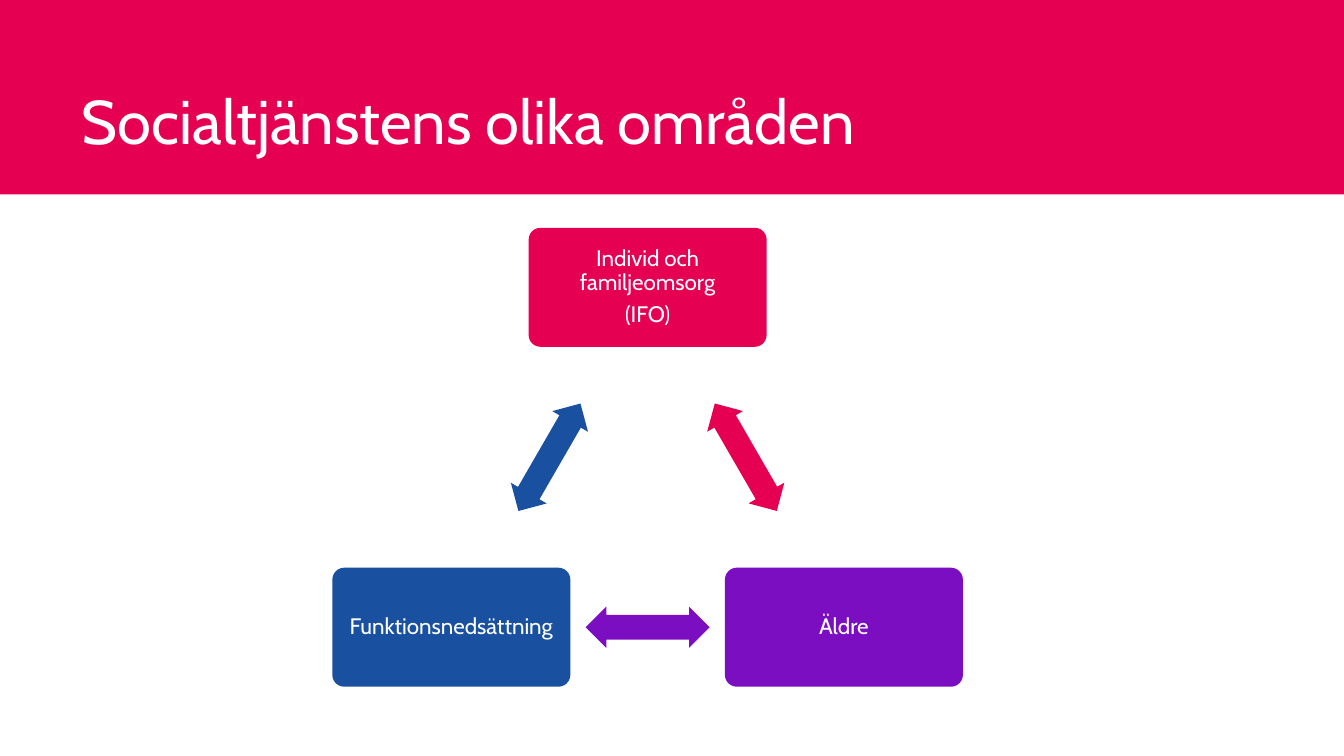
"""Build a slide showing the three linked areas of social services."""
from pptx import Presentation
from pptx.dml.color import RGBColor
from pptx.enum.shapes import MSO_SHAPE
from pptx.enum.text import MSO_ANCHOR, PP_ALIGN
from pptx.util import Pt

TITLE = "Socialtjänstens olika områden"
RED, PURPLE, BLUE, WHITE = "E50051", "7C0EC1", "1951A0", "FFFFFF"
FONT = "Cabin"
AREAS = [
    (["Individ och familjeomsorg", "(IFO)"], RED, (462.6, 205.2)),
    (["Äldre"], PURPLE, (602.8, 448)),
    (["Funktionsnedsättning"], BLUE, (322.4, 448)),
]
ARROW_TURNS = [60, 180, 300]
AREA_SIZE = (170, 85)
ARROW_SIZE = (88.6, 29.5)


def rgb(value):
    return RGBColor.from_string(value)


def add_filled(slide, kind, center, size, color, adjustments=()):
    (x, y), (width, height) = center, size
    shape = slide.shapes.add_shape(
        kind, Pt(x - width / 2), Pt(y - height / 2), Pt(width), Pt(height))
    shape.shadow.inherit = False
    shape.fill.solid()
    shape.fill.fore_color.rgb = rgb(color)
    shape.line.fill.background()
    for index, value in enumerate(adjustments):
        shape.adjustments[index] = value
    return shape


def write(frame, lines, size, align, anchor, inset, spacing, after=0):
    frame.word_wrap = True
    frame.vertical_anchor = anchor
    frame.margin_left = frame.margin_right = Pt(inset)
    frame.margin_top = frame.margin_bottom = Pt(inset)
    frame.text = "\n".join(lines)
    for paragraph in frame.paragraphs:
        paragraph.alignment = align
        paragraph.line_spacing = spacing
        paragraph.space_after = Pt(after)
        paragraph.font.name = FONT
        paragraph.font.size = Pt(size)
        paragraph.font.color.rgb = rgb(WHITE)


def main():
    deck = Presentation()
    deck.slide_width, deck.slide_height = Pt(960), Pt(540)
    slide = deck.slides.add_slide(deck.slide_layouts[6])

    add_filled(slide, MSO_SHAPE.RECTANGLE, (480, 69.4), (960, 138.8), RED)
    heading = slide.shapes.add_textbox(Pt(58.3), Pt(28.8), Pt(741.6), Pt(83.5))
    write(heading.text_frame, [TITLE], 44, PP_ALIGN.LEFT, MSO_ANCHOR.BOTTOM, 0, 1.2)

    following = AREAS[1:] + AREAS[:1]
    for area, neighbour, turn in zip(AREAS, following, ARROW_TURNS):
        lines, color, center = area
        box = add_filled(slide, MSO_SHAPE.ROUNDED_RECTANGLE, center, AREA_SIZE, color, [0.1])
        write(box.text_frame, lines, 16, PP_ALIGN.CENTER, MSO_ANCHOR.MIDDLE, 5, 0.9, 5.6)
        midpoint = [(a + b) / 2 for a, b in zip(center, neighbour[2])]
        arrow = add_filled(
            slide, MSO_SHAPE.LEFT_RIGHT_ARROW, midpoint, ARROW_SIZE, color, [0.6, 0.5])
        arrow.rotation = turn

    deck.save("out.pptx")


if __name__ == "__main__":
    main()
